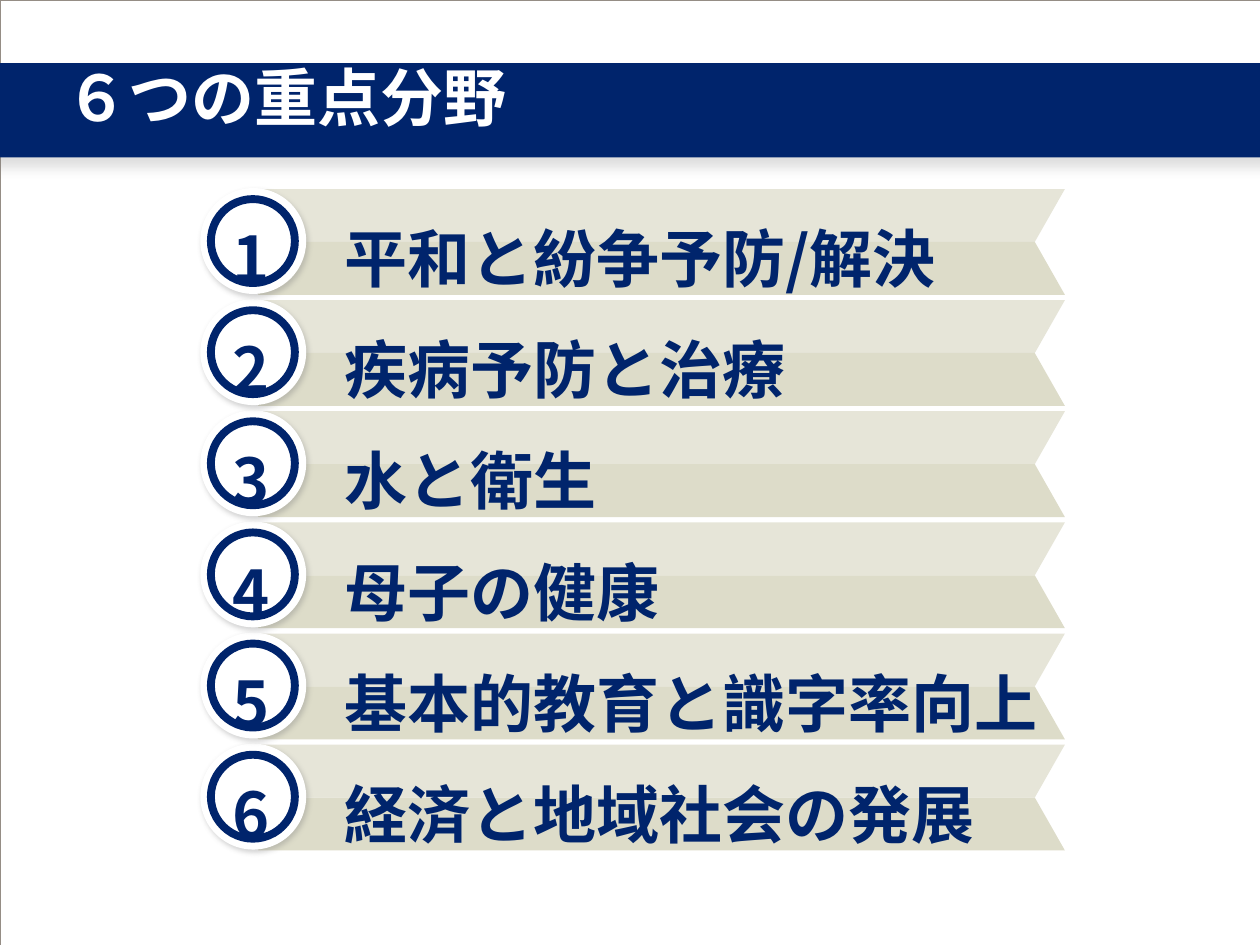
"""Build a slide listing six numbered areas of focus on notched ribbons."""
from lxml.etree import SubElement
from pptx import Presentation
from pptx.dml.color import RGBColor
from pptx.enum.shapes import MSO_SHAPE
from pptx.enum.text import MSO_ANCHOR, PP_ALIGN
from pptx.oxml.ns import qn
from pptx.util import Pt

NAVY = RGBColor(0x00, 0x24, 0x6C)
WHITE = RGBColor(0xFF, 0xFF, 0xFF)
FRAME = RGBColor(0x95, 0x8D, 0x85)
LIGHT = RGBColor(0xE6, 0xE5, 0xD8)
DARK = RGBColor(0xDD, 0xDC, 0xC9)
FONT = "Noto Sans CJK JP"
AREAS = ["平和と紛争予防/解決", "疾病予防と治療", "水と衛生",
         "母子の健康", "基本的教育と識字率向上", "経済と地域社会の発展"]
TOP, PITCH, HALF = 108, 63.5, 30.25


def add_shape(shapes, kind, box, fill=None, line=None, width=0, shadow=None):
    sp = shapes.add_shape(kind, *[Pt(v) for v in box])
    sp.shadow.inherit = False
    if fill is None:
        sp.fill.background()
    else:
        sp.fill.solid()
        sp.fill.fore_color.rgb = fill
    if line is None:
        sp.line.fill.background()
    else:
        sp.line.color.rgb = line
        sp.line.width = Pt(width)
    if shadow:
        alpha, blur, dist, angle = shadow
        effects = sp._element.spPr.find(qn("a:effectLst"))
        outer = SubElement(effects, qn("a:outerShdw"), blurRad=str(Pt(blur)),
                           dist=str(Pt(dist)), dir=str(angle * 60000), rotWithShape="0")
        clr = SubElement(outer, qn("a:srgbClr"), val="808080")
        SubElement(clr, qn("a:alpha"), val=str(alpha * 1000))
    return sp


def add_run(p, text, color):
    r = p.add_run()
    r.text = text
    r.font.size = Pt(36)
    r.font.bold = True
    r.font.name = FONT
    r.font.color.rgb = color
    SubElement(r._r.get_or_add_rPr(), qn("a:ea"), typeface=FONT)


prs = Presentation()
prs.slide_width, prs.slide_height = Pt(720), Pt(540)
s = prs.slides.add_slide(prs.slide_layouts[5])

add_shape(s.shapes, MSO_SHAPE.RECTANGLE, (0, 0, 720, 540), line=FRAME, width=0.13)
add_shape(s.shapes, MSO_SHAPE.RECTANGLE, (-6, 36, 732, 54), NAVY, shadow=(25, 7, 4.8, 90))

title = s.shapes.title
s.shapes._spTree.append(title._element)
title.left, title.top, title.width, title.height = Pt(30), Pt(36.5), Pt(690), Pt(60)
tf = title.text_frame
tf.vertical_anchor = MSO_ANCHOR.TOP
tf.margin_top = 0
p = tf.paragraphs[0]
p.alignment = PP_ALIGN.LEFT
p.line_spacing = 0.95
add_run(p, "６つの重点分野", WHITE)

for i, area in reversed(list(enumerate(AREAS))):
    top = TOP + i * PITCH
    shapes = s.shapes.add_group_shape().shapes
    for j, color in enumerate((LIGHT, DARK)):
        sp = add_shape(shapes, MSO_SHAPE.PARALLELOGRAM, (130.5, top + j * HALF, 478, HALF), color)
        sp.adjustments[0] = 0.568
    sp._element.spPr.xfrm.set("flipV", "1")
    add_shape(shapes, MSO_SHAPE.OVAL, (114.5, top - 0.5, 60.5, 60.5), WHITE,
              shadow=(35, 3.1, 1.8, 60))
    add_shape(shapes, MSO_SHAPE.OVAL, (120.5, top + 5.75, 48, 48), line=NAVY, width=4.5)

    sp = shapes.add_textbox(Pt(125.5), Pt(top - 0.75), Pt(474.5), Pt(62))
    tf = sp.text_frame
    tf.word_wrap = True
    tf.vertical_anchor = MSO_ANCHOR.TOP
    tf.margin_top = Pt(6.5)
    tf.margin_right = tf.margin_bottom = 0
    p = tf.paragraphs[0]
    p.line_spacing = Pt(55)
    tabs = SubElement(p._p.get_or_add_pPr(), qn("a:tabLst"))
    SubElement(tabs, qn("a:tab"), pos=str(Pt(64)), algn="l")
    add_run(p, f"{i + 1}\t", NAVY)
    add_run(p, area, NAVY)

prs.save("out.pptx")
